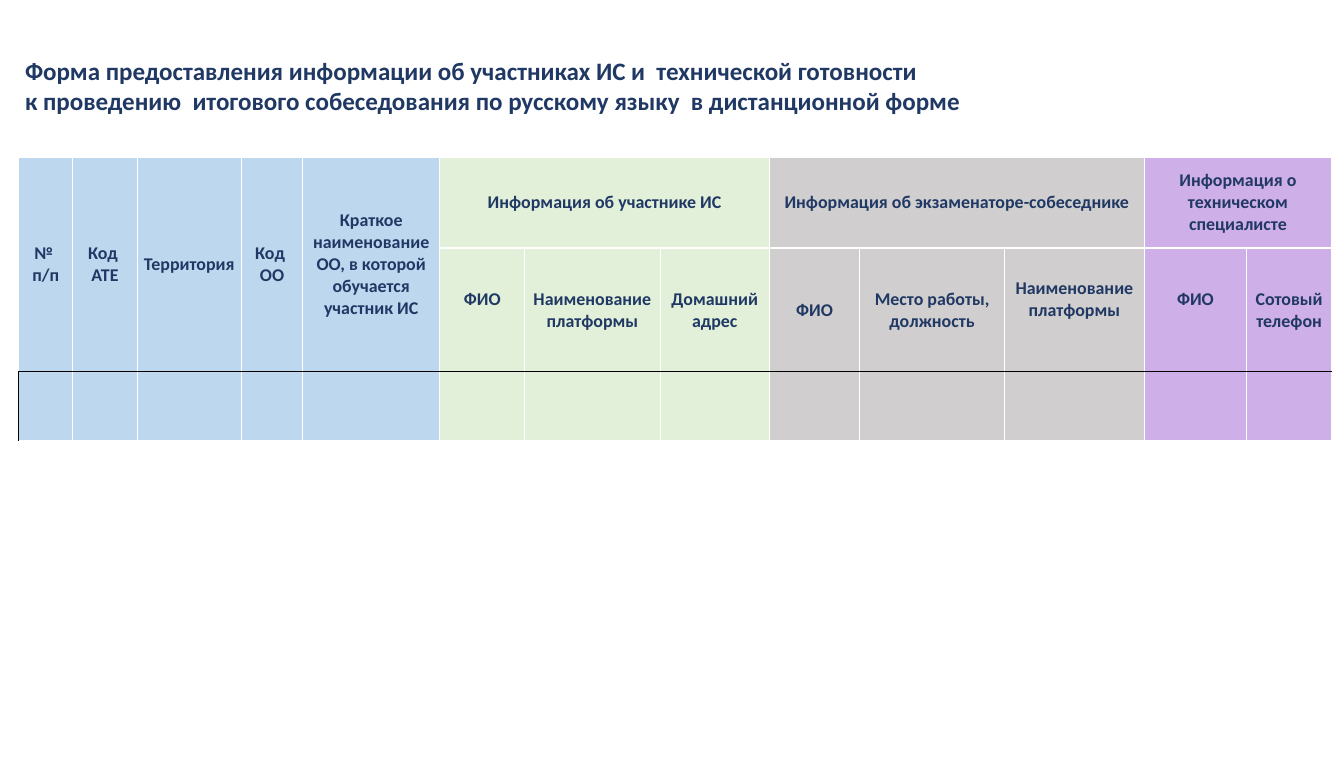
from lxml import etree
from pptx import Presentation
from pptx.dml.color import RGBColor
from pptx.enum.text import MSO_ANCHOR, MSO_AUTO_SIZE, PP_ALIGN
from pptx.oxml.ns import qn
from pptx.util import Pt

PX = 9144  # EMU in one px, 100 px to the inch
MIDDLE = MSO_ANCHOR.MIDDLE
LEFT, CENTER = PP_ALIGN.LEFT, PP_ALIGN.CENTER
FIT_SHAPE = MSO_AUTO_SIZE.SHAPE_TO_FIT_TEXT

NAVY = RGBColor(0x20, 0x38, 0x64)
BLUE = RGBColor(0xBD, 0xD7, 0xEE)
GREEN = RGBColor(0xE2, 0xF0, 0xD9)
GRAY = RGBColor(0xD0, 0xCE, 0xCE)
VIOLET = RGBColor(0xCF, 0xAF, 0xE7)
WHITE = RGBColor(0xFF, 0xFF, 0xFF)
BLACK = RGBColor(0x00, 0x00, 0x00)

TITLE = [
    "Форма предоставления информации об участниках ИС и  технической готовности",
    "к проведению  итогового собеседования по русскому языку  в дистанционной форме",
]
ROW_HEIGHTS = [141, 192, 107]
CELL_MARGIN = 6
BOTTOM_MARGIN = 5
RAISED_MARGIN = 39  # lifts a heading by half a line

# Columns whose heading spans both header rows: lines, width
SINGLE_COLUMNS = [
    (["№ ", "п/п"], 84),
    (["Код ", "АТЕ"], 100),
    (["Территория"], 162),
    (["Код ", "ОО"], 95),
    (["Краткое наименование ОО, в которой обучается участник ИС"], 213),
]
# Column groups: heading, fill, columns (heading, width, raised)
GROUPS = [
    ("Информация об участнике ИС", GREEN, [
        ("ФИО", 132, True),
        ("Наименование платформы", 210, False),
        ("Домашний адрес", 170, False),
    ]),
    ("Информация об экзаменаторе-собеседнике", GRAY, [
        ("ФИО", 140, False),
        ("Место работы, должность", 225, False),
        ("Наименование платформы", 217, True),
    ]),
    ("Информация о техническом специалисте", VIOLET, [
        ("ФИО", 159, True),
        ("Сотовый телефон", 132, False),
    ]),
]


def write_text(tf, lines, size=20, color=NAVY, bold=True, align=CENTER, font="Calibri"):
    for i, line in enumerate(lines):
        p = tf.paragraphs[0] if i == 0 else tf.add_paragraph()
        p.alignment = align
        r = p.add_run()
        r.text = line
        r.font.name = font
        r.font.size = Pt(size)
        r.font.bold = bold
        r.font.color.rgb = color


def set_borders(cell, left=WHITE, top=WHITE, bottom=WHITE, bottom_width=1):
    tc_pr = cell._tc.get_or_add_tcPr()
    sides = [("L", left, 1), ("R", WHITE, 1), ("T", top, 1), ("B", bottom, bottom_width)]
    for i, (side, color, width) in enumerate(sides):
        ln = etree.Element(qn(f"a:ln{side}"), w=str(Pt(width)))
        fill = etree.SubElement(ln, qn("a:solidFill"))
        etree.SubElement(fill, qn("a:srgbClr"), val=str(color))
        tc_pr.insert(i, ln)


def format_cell(cell, fill, lines=(), raised=False, **borders):
    cell.fill.solid()
    cell.fill.fore_color.rgb = fill
    cell.vertical_anchor = MIDDLE
    cell.margin_left = cell.margin_right = CELL_MARGIN * PX
    cell.margin_bottom = (RAISED_MARGIN if raised else BOTTOM_MARGIN) * PX
    write_text(cell.text_frame, lines)
    set_borders(cell, **borders)


def add_title(slide):
    sp = slide.shapes.add_textbox(29 * PX, 81 * PX, 1958 * PX, 104 * PX)
    tf = sp.text_frame
    tf.word_wrap = True
    tf.auto_size = FIT_SHAPE
    write_text(tf, TITLE, size=28, align=LEFT)


def add_form_table(slide):
    widths = [width for _, width in SINGLE_COLUMNS]
    widths += [width for _, _, columns in GROUPS for _, width, _ in columns]
    fills = [BLUE] * len(SINGLE_COLUMNS)
    fills += [fill for _, fill, columns in GROUPS for _ in columns]

    frame = slide.shapes.add_table(len(ROW_HEIGHTS), len(widths), 29 * PX, 244 * PX,
                                   sum(widths) * PX, sum(ROW_HEIGHTS) * PX)
    table = frame.table
    table.first_row = table.horz_banding = False
    for column, width in zip(table.columns, widths):
        column.width = width * PX
    for row, height in zip(table.rows, ROW_HEIGHTS):
        row.height = height * PX

    # Headings over both header rows
    for col, (lines, _) in enumerate(SINGLE_COLUMNS):
        table.cell(0, col).merge(table.cell(1, col))
        format_cell(table.cell(0, col), BLUE, lines, bottom=BLACK)
        format_cell(table.cell(1, col), BLUE, bottom=BLACK)

    # Group headings with their columns
    col = len(SINGLE_COLUMNS)
    for heading, fill, columns in GROUPS:
        table.cell(0, col).merge(table.cell(0, col + len(columns) - 1))
        for i, (label, _, raised) in enumerate(columns):
            format_cell(table.cell(0, col + i), fill, [heading] if i == 0 else [],
                        bottom_width=3)
            format_cell(table.cell(1, col + i), fill, [label], raised, bottom=BLACK)
        col += len(columns)

    # Empty row to fill in
    for col, fill in enumerate(fills):
        format_cell(table.cell(2, col), fill, left=BLACK if col == 0 else WHITE, top=BLACK)


def main():
    prs = Presentation()
    prs.slide_width, prs.slide_height = 2087 * PX, 1181 * PX
    slide = prs.slides.add_slide(prs.slide_layouts[6])
    add_form_table(slide)
    add_title(slide)
    prs.save("out.pptx")


if __name__ == "__main__":
    main()
